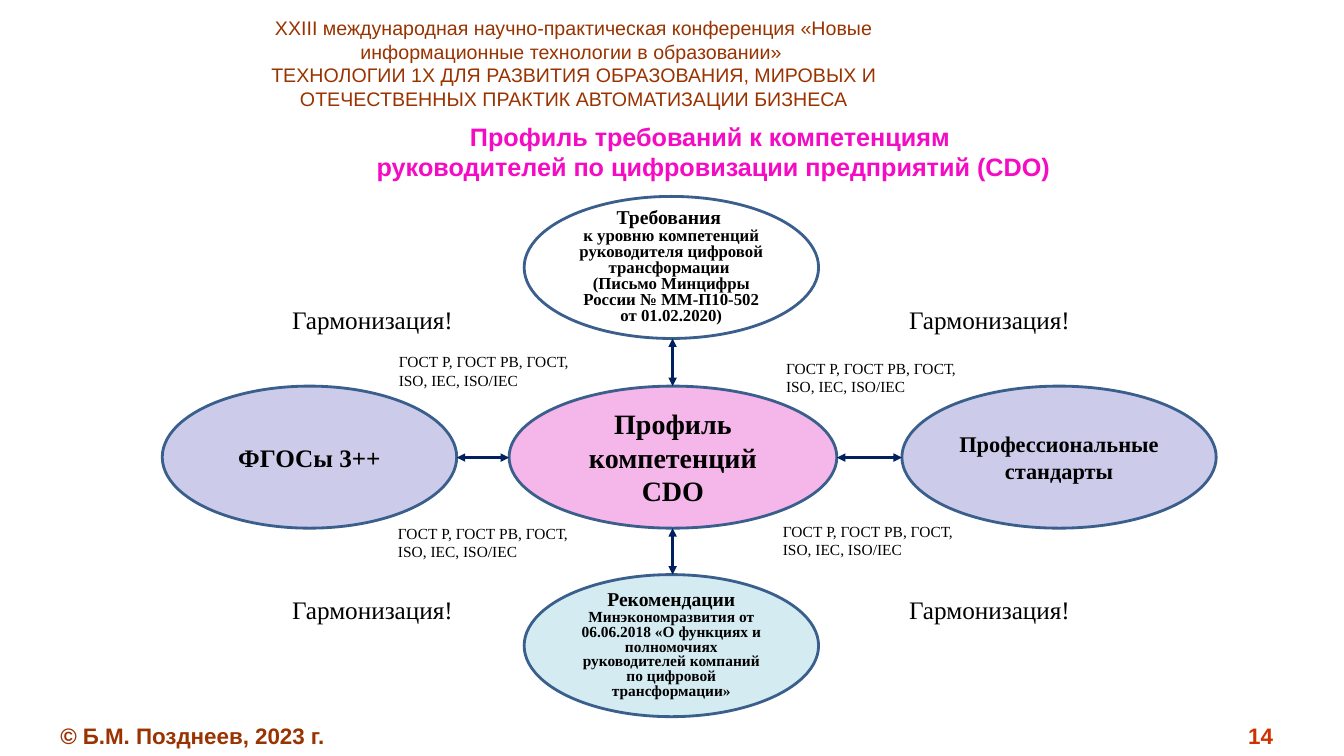
"""Builds the slide on the competence profile of a chief digital officer."""
from dataclasses import dataclass

from lxml.etree import SubElement
from pptx import Presentation
from pptx.dml.color import RGBColor
from pptx.enum.shapes import MSO_CONNECTOR, MSO_SHAPE
from pptx.enum.text import MSO_ANCHOR, MSO_AUTO_SIZE, PP_ALIGN
from pptx.oxml.ns import qn
from pptx.shapes.autoshape import Shape
from pptx.slide import Slide
from pptx.text.text import TextFrame
from pptx.util import Cm, Pt


@dataclass(frozen=True)
class Theme:
    sans: str = "Arial"
    serif: str = "Times New Roman"
    title: str = "F50BC3"
    brown: str = "993300"
    number: str = "CC3300"
    ink: str = "000000"
    outline: str = "3A5F8C"
    arrow: str = "002060"
    lavender: str = "000099"
    pink: str = "EC6ED4"
    aqua: str = "93CDDD"
    white: str = "FFFFFF"
    core: int = 20
    heading: int = 18
    footer: int = 16
    lead: int = 14
    detail: int = 12
    small: int = 11
    stroke: int = 2


THEME = Theme()


@dataclass(frozen=True)
class Style:
    size: int
    font: str = THEME.serif
    color: str = THEME.ink
    bold: bool = False
    align: PP_ALIGN = PP_ALIGN.LEFT
    spacing: float | None = None


@dataclass(frozen=True)
class Span:
    text: str
    size: int | None = None


@dataclass(frozen=True)
class Para:
    spans: tuple[Span, ...]
    style: Style


@dataclass(frozen=True)
class Area:
    left: float
    top: float
    width: float
    height: float

    def lengths(self) -> tuple[Cm, Cm, Cm, Cm]:
        """Return the area as slide lengths."""
        return Cm(self.left), Cm(self.top), Cm(self.width), Cm(self.height)


@dataclass(frozen=True)
class Label:
    area: Area
    paras: tuple[Para, ...]
    wrap: bool = True
    grow: bool = False


@dataclass(frozen=True)
class Node:
    area: Area
    fill: str
    opacity: int
    paras: tuple[Para, ...]


@dataclass(frozen=True)
class Arrow:
    start: tuple[float, float]
    end: tuple[float, float]


def plain(style: Style, *lines: str) -> tuple[Para, ...]:
    """Return one paragraph per line in a single style."""
    return tuple(Para((Span(line),), style) for line in lines)


def write(frame: TextFrame, paras: tuple[Para, ...]) -> None:
    """Fill a text frame with styled paragraphs."""
    for index, para in enumerate(paras):
        paragraph = frame.add_paragraph() if index else frame.paragraphs[0]
        style = para.style
        paragraph.alignment = style.align
        if style.spacing:
            paragraph.line_spacing = style.spacing
        for span in para.spans:
            for row, line in enumerate(span.text.split("\n")):
                if row:
                    paragraph.add_line_break()
                run = paragraph.add_run()
                run.text = line
                if span.size:
                    run.font.size = Pt(span.size)
        font = paragraph.font
        font.name, font.size, font.bold = style.font, Pt(style.size), style.bold
        font.color.rgb = RGBColor.from_string(style.color)


def draw_title(page: Slide, area: Area, paras: tuple[Para, ...]) -> None:
    """Move and fill the title placeholder."""
    title = page.shapes.title
    title.left, title.top, title.width, title.height = area.lengths()
    title.text_frame.auto_size = MSO_AUTO_SIZE.NONE
    title.text_frame.vertical_anchor = MSO_ANCHOR.TOP
    write(title.text_frame, paras)


def draw_label(page: Slide, label: Label) -> None:
    """Add a text box."""
    frame = page.shapes.add_textbox(*label.area.lengths()).text_frame
    frame.word_wrap = label.wrap
    frame.auto_size = MSO_AUTO_SIZE.SHAPE_TO_FIT_TEXT if label.grow else MSO_AUTO_SIZE.NONE
    write(frame, label.paras)


def draw_node(page: Slide, node: Node) -> Shape:
    """Add an ellipse with a translucent fill."""
    ellipse = page.shapes.add_shape(MSO_SHAPE.OVAL, *node.area.lengths())
    ellipse.shadow.inherit = False
    ellipse.fill.solid()
    ellipse.fill.fore_color.rgb = RGBColor.from_string(node.fill)
    color = ellipse.fill._xPr.find(qn("a:solidFill")).find(qn("a:srgbClr"))
    SubElement(color, qn("a:alpha"), val=str(node.opacity * 1000))
    ellipse.line.color.rgb = RGBColor.from_string(THEME.outline)
    ellipse.line.width = Pt(THEME.stroke)
    ellipse.text_frame.word_wrap = True
    ellipse.text_frame.vertical_anchor = MSO_ANCHOR.MIDDLE
    write(ellipse.text_frame, node.paras)
    return ellipse


def draw_arrow(page: Slide, arrow: Arrow) -> None:
    """Add a straight double-headed arrow."""
    points = [Cm(value) for value in (*arrow.start, *arrow.end)]
    connector = page.shapes.add_connector(MSO_CONNECTOR.STRAIGHT, *points)
    connector.line.color.rgb = RGBColor.from_string(THEME.arrow)
    connector.line.width = Pt(THEME.stroke)
    line = connector.line._get_or_add_ln()
    for end in ("a:headEnd", "a:tailEnd"):
        SubElement(line, qn(end), type="triangle")
    SubElement(connector._element.spPr, qn("a:effectLst"))


def centred(size: int, spacing: float | None = None) -> Style:
    """Return the bold centred style of the ellipses."""
    return Style(size, bold=True, align=PP_ALIGN.CENTER, spacing=spacing)


TITLE = Style(THEME.heading, THEME.sans, THEME.title, True, PP_ALIGN.CENTER)
HEADER = Style(THEME.lead, THEME.sans, THEME.brown, False, PP_ALIGN.CENTER)
COPYRIGHT = Style(THEME.footer, THEME.sans, THEME.brown, True)
NUMBER = Style(THEME.footer, THEME.sans, THEME.number, True, PP_ALIGN.RIGHT)
TIGHT = centred(THEME.lead, 0.8)

AXIS_X, AXIS_Y, NODE_HEIGHT = 16.95, 11.53, 3.58
UPPER, MIDDLE, LOWER = 4.95, 9.73, 14.48
NODES = (
    Node(Area(4.09, MIDDLE, 7.42, NODE_HEIGHT), THEME.lavender, 20,
         plain(centred(THEME.heading), "ФГОСы 3++")),
    Node(Area(12.83, MIDDLE, 8.26, NODE_HEIGHT), THEME.pink, 50,
         plain(centred(THEME.core), "Профиль компетенций CDO")),
    Node(Area(22.73, MIDDLE, 7.92, NODE_HEIGHT), THEME.lavender, 20,
         plain(centred(THEME.footer), "Профессиональные стандарты")),
    Node(Area(13.21, LOWER, 7.42, NODE_HEIGHT), THEME.aqua, 40,
         (Para((Span("Рекомендации ", THEME.lead),
                Span("Минэкономразвития от 06.06.2018 «О функциях и полномочиях "
                     "руководителей компаний по цифровой трансформации»", THEME.small)), TIGHT),)),
    Node(Area(13.21, UPPER, 7.42, NODE_HEIGHT), THEME.white, 40,
         plain(TIGHT, "Требования ")
         + plain(centred(THEME.detail, 0.8),
                 "к уровню компетенций руководителя цифровой трансформации \n"
                 "(Письмо Минцифры России № ММ-П10-502 от 01.02.2020)")),
)
ARROWS = (
    Arrow((11.51, AXIS_Y), (12.83, AXIS_Y)),
    Arrow((21.09, AXIS_Y), (22.73, AXIS_Y)),
    Arrow((AXIS_X, UPPER + NODE_HEIGHT), (AXIS_X, MIDDLE)),
    Arrow((AXIS_X, MIDDLE + NODE_HEIGHT), (AXIS_X, LOWER)),
)
HARMONY = tuple(
    Label(Area(left, top, 4.62, 1.02), plain(Style(THEME.heading), "Гармонизация!"), False, True)
    for top in (7.55, 14.86) for left in (7.11, 22.66))
STANDARDS = tuple(
    Label(Area(left, top, 5.03, 1.19),
          plain(Style(THEME.small), "ГОСТ Р, ГОСТ РВ, ГОСТ, ISO, IEC, ISO/IEC"), grow=True)
    for left, top in ((9.8, 8.76), (19.56, 8.92), (9.78, 13.08), (19.48, 13.03)))
FRAME = (
    Label(Area(1.27, 18.06, 7.26, 0.94), plain(COPYRIGHT, "© Б.М. Позднеев, 2023 г."), False, True),
    Label(Area(30.2, 18.06, 2.13, 0.71), plain(NUMBER, "14")),
    Label(Area(4.9, 0.28, 19.13, 2.06), plain(
        HEADER,
        "XXIII международная научно-практическая конференция «Новые информационные "
        "технологии в образовании» ",
        "ТЕХНОЛОГИИ 1Х ДЛЯ РАЗВИТИЯ ОБРАЗОВАНИЯ, МИРОВЫХ И ОТЕЧЕСТВЕННЫХ ПРАКТИК "
        "АВТОМАТИЗАЦИИ БИЗНЕСА")),
)


def main() -> None:
    """Build and save the deck."""
    deck = Presentation()
    deck.slide_width, deck.slide_height = Cm(33.87), Cm(19.05)
    page = deck.slides.add_slide(deck.slide_layouts.get_by_name("Title Only"))
    draw_title(page, Area(2.74, 2.92, 30.48, 1.45), plain(
        TITLE, "Профиль требований к компетенциям ",
        "руководителей по цифровизации предприятий (CDO)"))
    for node in NODES:
        draw_node(page, node)
    for arrow in ARROWS:
        draw_arrow(page, arrow)
    for label in HARMONY + STANDARDS + FRAME:
        draw_label(page, label)
    deck.save("out.pptx")


if __name__ == "__main__":
    main()
